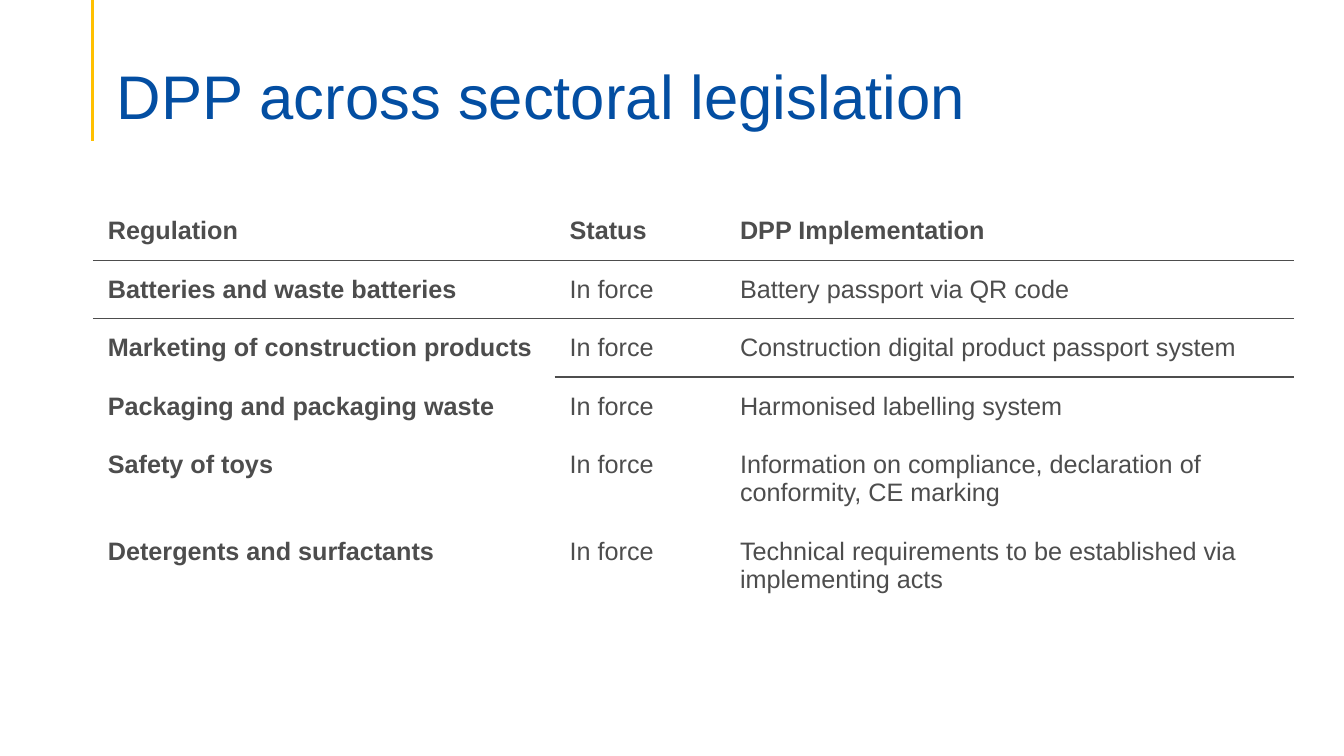
from dataclasses import dataclass

from lxml import etree
from pptx import Presentation
from pptx.dml.color import RGBColor
from pptx.enum.shapes import MSO_CONNECTOR
from pptx.enum.text import MSO_ANCHOR, MSO_AUTO_SIZE, PP_ALIGN
from pptx.oxml.ns import qn
from pptx.util import Emu, Pt

EMU_PER_PX = 9144  # 100 px to the inch
STRAIGHT = MSO_CONNECTOR.STRAIGHT
MIDDLE = MSO_ANCHOR.MIDDLE
NO_AUTOFIT = MSO_AUTO_SIZE.NONE
LEFT = PP_ALIGN.LEFT
TITLE_ONLY = 5
PLAIN_TABLE_STYLE = "{2D5ABB26-0587-4C30-8999-92F81FD0307C}"
FONT = "Arial"
COLORS = {"title": "034EA2", "text": "4D4D4D", "accent": "FFC000"}

COLUMN_WIDTHS = (458, 169, 564)
ROW_HEIGHT = 41
CELL_MARGIN = 15


@dataclass(frozen=True)
class Regulation:
    name: str
    status: str
    implementation: str
    bold: tuple[bool, bool, bool] = (True, False, False)
    ruled_below: tuple[bool, bool, bool] = (False, False, False)


ROWS = (
    Regulation("Regulation", "Status", "DPP Implementation",
               bold=(True, True, True), ruled_below=(True, True, True)),
    Regulation("Batteries and waste batteries", "In force", "Battery passport via QR code",
               ruled_below=(False, True, True)),
    Regulation("Marketing of construction products", "In force",
               "Construction digital product passport system"),
    Regulation("Packaging and packaging waste", "In force", "Harmonised labelling system"),
    Regulation("Safety of toys", "In force",
               "Information on compliance, declaration of conformity, CE marking"),
    Regulation("Detergents and surfactants", "In force",
               "Technical requirements to be established via implementing acts"),
)


def px(length: int) -> Emu:
    return Emu(length * EMU_PER_PX)


def set_all(target, values: dict) -> None:
    for name, value in values.items():
        setattr(target, name, value)


def set_font(font, size: int, color: str, bold: bool = False) -> None:
    set_all(font, {"name": FONT, "size": Pt(size), "bold": bold})
    font.color.rgb = RGBColor.from_string(COLORS[color])


def add_accent_line(page) -> None:
    line = page.shapes.add_connector(STRAIGHT, px(92), px(0), px(92), px(140))
    line.line.color.rgb = RGBColor.from_string(COLORS["accent"])
    line.line.width = Pt(2.25)
    etree.SubElement(line._element.spPr, qn("a:effectLst"))


def fill_title(page) -> None:
    title = page.shapes.title
    set_all(title, {"left": px(106), "top": px(53), "width": px(1150), "height": px(86)})
    frame = title.text_frame
    set_all(frame, {
        "text": "DPP across sectoral legislation",
        "word_wrap": True, "auto_size": NO_AUTOFIT, "vertical_anchor": MIDDLE,
        "margin_left": px(10), "margin_top": px(5),
        "margin_right": px(10), "margin_bottom": px(0),
    })
    para = frame.paragraphs[0]
    set_all(para, {"alignment": LEFT, "line_spacing": 0.9})
    set_font(para.font, 44, "title")


def add_border(cell, side: str) -> None:
    """Rule one side of a cell; side is the DrawingML tag, such as lnB."""
    border = etree.Element(qn(f"a:{side}"), w=str(Pt(1)))
    fill = etree.SubElement(border, qn("a:solidFill"))
    etree.SubElement(fill, qn("a:srgbClr"), val=COLORS["text"])
    cell._tc.get_or_add_tcPr().insert(0, border)


def fill_cell(cell, text: str, bold: bool) -> None:
    margins = ("margin_left", "margin_top", "margin_right", "margin_bottom")
    set_all(cell, dict.fromkeys(margins, px(CELL_MARGIN)))
    cell.fill.background()
    cell.text = text
    set_font(cell.text_frame.paragraphs[0].runs[0].font, 18, "text", bold)


def add_regulation_table(page) -> None:
    frame = page.shapes.add_table(
        len(ROWS), len(COLUMN_WIDTHS), px(92), px(200),
        px(sum(COLUMN_WIDTHS)), px(ROW_HEIGHT * len(ROWS)))
    table = frame.table
    set_all(table, {"first_row": False, "horz_banding": False})
    table._tbl.tblPr.find(qn("a:tableStyleId")).text = PLAIN_TABLE_STYLE
    for column, width in zip(table.columns, COLUMN_WIDTHS):
        column.width = px(width)
    for r, row in enumerate(ROWS):
        table.rows[r].height = px(ROW_HEIGHT)
        for c, text in enumerate((row.name, row.status, row.implementation)):
            cell = table.cell(r, c)
            fill_cell(cell, text, row.bold[c])
            if row.ruled_below[c]:
                add_border(cell, "lnB")
            if r and ROWS[r - 1].ruled_below[c]:
                add_border(cell, "lnT")


def main() -> None:
    deck = Presentation()
    set_all(deck, {"slide_width": px(1333), "slide_height": px(750)})
    page = deck.slides.add_slide(deck.slide_layouts[TITLE_ONLY])
    add_accent_line(page)
    add_regulation_table(page)
    fill_title(page)
    deck.save("out.pptx")


if __name__ == "__main__":
    main()
